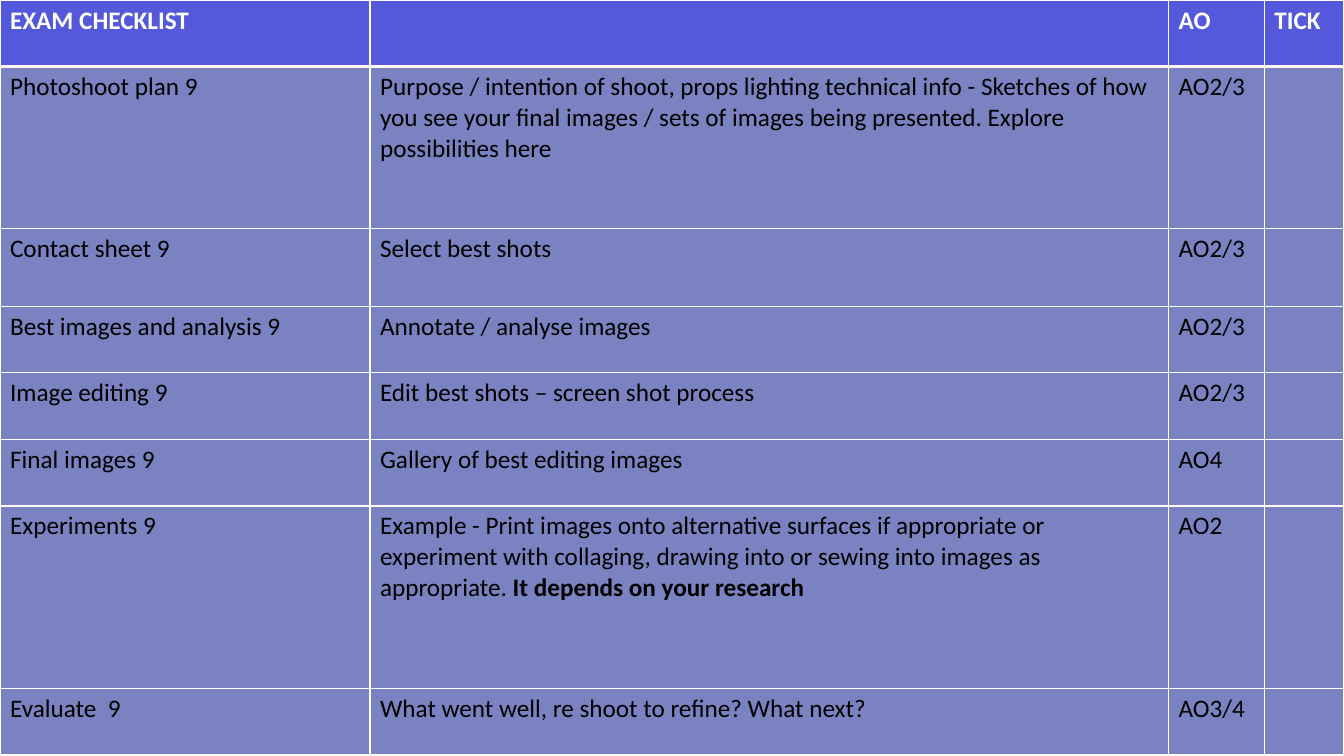
from lxml import etree
from pptx import Presentation
from pptx.dml.color import RGBColor
from pptx.oxml.ns import qn
from pptx.util import Inches, Pt

WHITE = RGBColor(0xFF, 0xFF, 0xFF)
BLACK = RGBColor(0, 0, 0)
HEAD = RGBColor(0x54, 0x58, 0xDA)
BODY = RGBColor(0x7B, 0x82, 0xC1)

WIDTHS = [3.67, 7.92, 0.95, 0.79]
HEIGHTS = [0.66, 1.61, 0.77, 0.66, 0.66, 0.66, 1.81, 0.66]
STRONG = "It depends on your research"
ROWS = [
    ("EXAM CHECKLIST", "", "AO", "TICK"),
    ("Photoshoot plan 9",
     "Purpose / intention of shoot, props lighting technical info - Sketches of how "
     "you see your final images / sets of images being presented. Explore "
     "possibilities here", "AO2/3", ""),
    ("Contact sheet 9", "Select best shots", "AO2/3", ""),
    ("Best images and analysis 9", "Annotate / analyse images", "AO2/3", ""),
    ("Image editing 9", "Edit best shots – screen shot process", "AO2/3", ""),
    ("Final images 9", "Gallery of best editing images", "AO4", ""),
    ("Experiments 9",
     "Example - Print images onto alternative surfaces if appropriate or "
     "experiment with collaging, drawing into or sewing into images as "
     "appropriate. ", "AO2", ""),
    ("Evaluate  9", "What went well, re shoot to refine? What next?", "AO3/4", ""),
]


def write(cell, text, color=BLACK, bold=False, size=18, font="Calibri"):
    """Add one formatted run to the cell's first paragraph."""
    run = cell.text_frame.paragraphs[0].add_run()
    run.text = text
    run.font.name = font
    run.font.size = Pt(size)
    run.font.bold = bold
    run.font.color.rgb = color


def border(cell, **widths):
    """Draw white cell edges; widths in points are keyed by L, R, T and B, in that order."""
    props = cell._tc.get_or_add_tcPr()
    for place, (side, width) in enumerate(widths.items()):
        line = etree.Element(qn(f"a:ln{side}"), w=str(Pt(width)))
        fill = etree.SubElement(line, qn("a:solidFill"))
        etree.SubElement(fill, qn("a:srgbClr"), val=str(WHITE))
        props.insert(place, line)


prs = Presentation()
prs.slide_width = Inches(13.33)
prs.slide_height = Inches(7.5)
slide = prs.slides.add_slide(prs.slide_layouts[6])

frame = slide.shapes.add_table(len(ROWS), len(WIDTHS), 0, 0,
                               Inches(13.33), Inches(7.5))
table = frame.table
for col, width in zip(table.columns, WIDTHS):
    col.width = Inches(width)

for r, (row, height) in enumerate(zip(ROWS, HEIGHTS)):
    table.rows[r].height = Inches(height)
    top = r == 0
    for c, text in enumerate(row):
        cell = table.cell(r, c)
        cell.fill.solid()
        cell.fill.fore_color.rgb = HEAD if top else BODY
        border(cell, L=1, R=1, T=3 if r == 1 else 1, B=3 if top else 1)
        if text:
            write(cell, text, color=WHITE if top else BLACK, bold=top)
        if text.startswith("Example"):
            write(cell, STRONG, bold=True)

prs.save("out.pptx")
